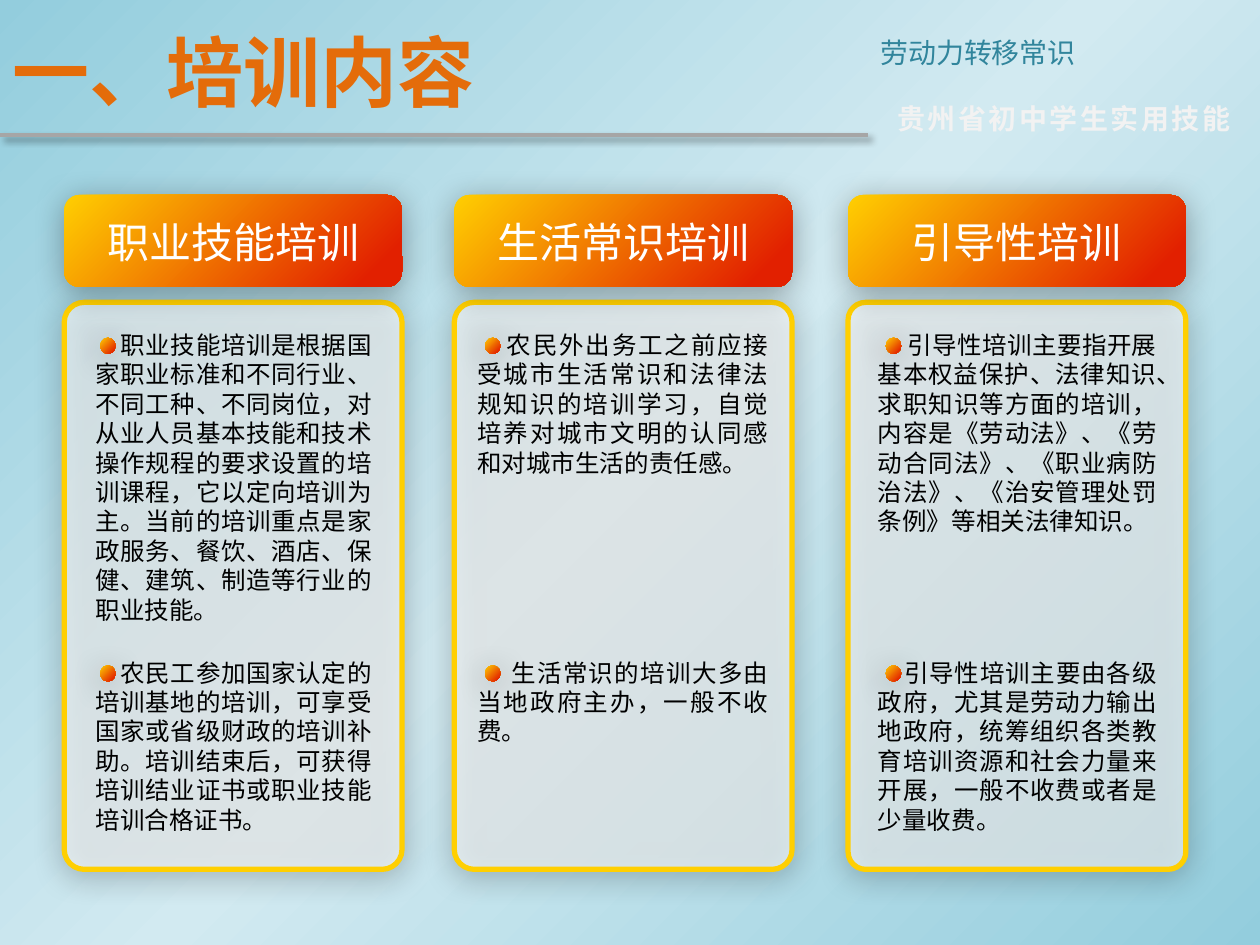
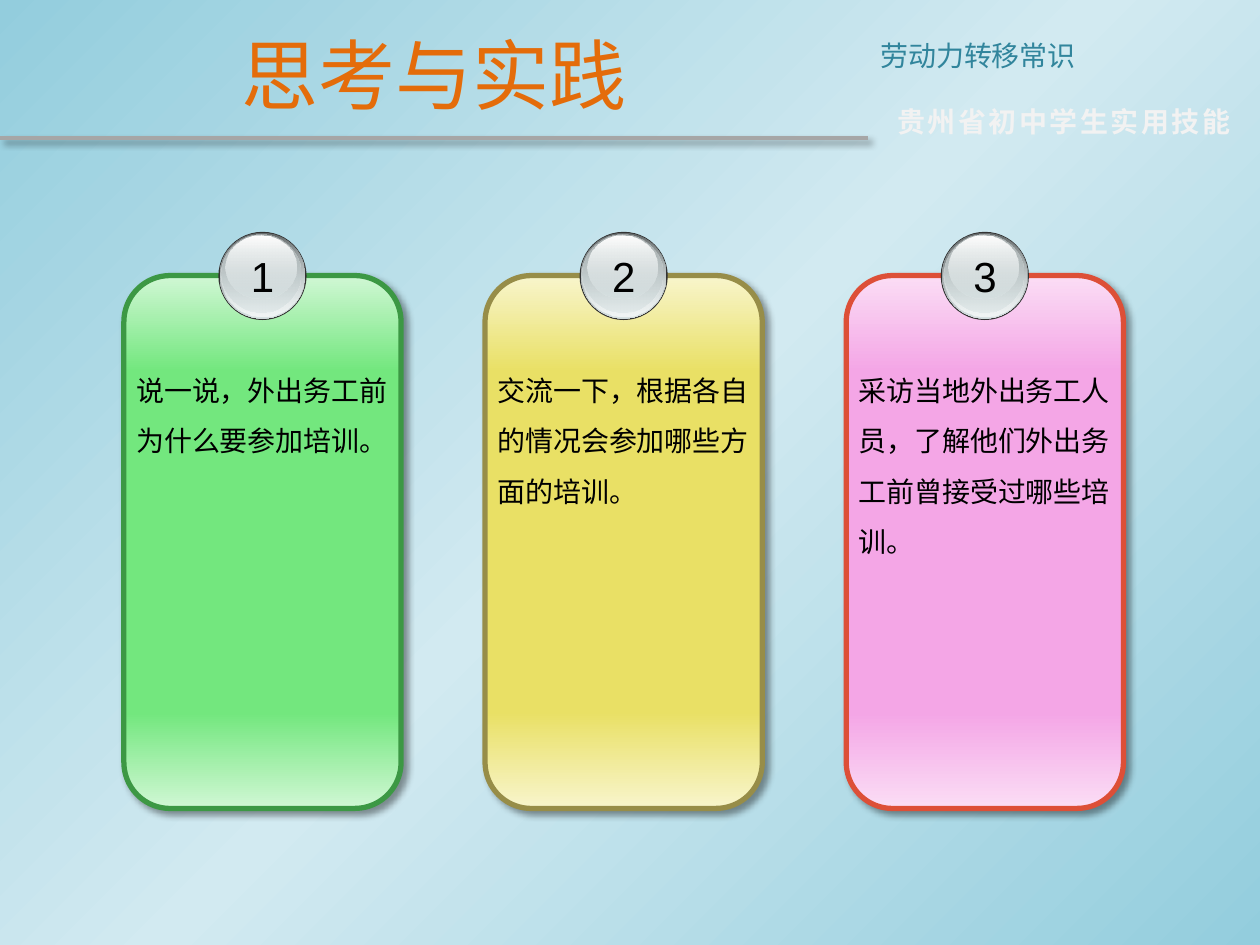
import lxml.etree
import pptx
import pptx.dml.color
import pptx.enum.shapes
import pptx.enum.text
import pptx.oxml.ns
import pptx.util

Pt = pptx.util.Pt
qn = pptx.oxml.ns.qn
KIND = pptx.enum.shapes.MSO_SHAPE
ALIGN = pptx.enum.text.PP_ALIGN
SANS = "Noto Sans CJK SC"

HUES = {
    "sky": "93CDDD", "pale": "D2EAF1", "rule": "A6A6A6",
    "teal": "31859C", "title": "E46C0A", "mist": "F2F2F2",
    "black": "000000", "white": "FFFFFF",
    "gold": "FFCF01", "red": "E22000",
    "rim": "333333", "steel": "636869", "ash": "AAB2B3",
    "ice": "D6E1E2", "frost": "F1F5F5",
    "lime": "73E77E", "mint": "D0F7D4", "green": "3C9844",
    "corn": "E9E065", "cream": "F8F5CC", "olive": "978D48",
    "pink": "F4A6E6", "blush": "FBDDF5", "brick": "DD4F37",
}
FLAME = ([(0, "gold"), (90, "red")], 45)
GLOW = (33, 17.8, 3, 87)
DROP = (40, 4, 3, 45)


class Deck:
    def __init__(self):
        self.show = pptx.Presentation()
        self.show.slide_width, self.show.slide_height = Pt(720), Pt(540)
        self.slide = None

    def hue(self, name):
        return pptx.dml.color.RGBColor.from_string(HUES[name])

    def tint(self, node, name, alpha=100):
        color = lxml.etree.SubElement(node, qn("a:srgbClr"), val=HUES[name])
        if alpha < 100:
            lxml.etree.SubElement(color, qn("a:alpha"), val=str(alpha * 1000))

    def blend(self, fill, root, stops, angle):
        fill.gradient()
        grad = next(root.iter(qn("a:gradFill")))
        for child in list(grad):
            grad.remove(child)
        group = lxml.etree.SubElement(grad, qn("a:gsLst"))
        for place, *color in stops:
            stop = lxml.etree.SubElement(group, qn("a:gs"), pos=str(place * 1000))
            self.tint(stop, *color)
        lxml.etree.SubElement(grad, qn("a:lin"), ang=str(angle * 60000), scaled="0")

    def shade(self, effect, alpha, blur, dist, angle):
        cast = lxml.etree.SubElement(
            effect, qn("a:outerShdw"), blurRad=str(Pt(blur)), dist=str(Pt(dist)),
            dir=str(angle * 60000), algn="ctr", rotWithShape="0")
        self.tint(cast, "black", alpha)

    def shape(self, kind, box, fill, alpha=100, line=None, shadow=None, bend=None):
        item = self.slide.shapes.add_shape(kind, *map(Pt, box))
        if bend is not None:
            item.adjustments[0] = bend
        props = item.element.spPr
        if isinstance(fill, str):
            item.fill.solid()
            item.fill.fore_color.rgb = self.hue(fill)
            if alpha < 100:
                color = next(props.iter(qn("a:srgbClr")))
                lxml.etree.SubElement(color, qn("a:alpha"), val=str(alpha * 1000))
        else:
            self.blend(item.fill, props, *fill)
        if line:
            item.line.color.rgb = self.hue(line)
            item.line.width = Pt(3)
        else:
            item.line.fill.background()
        item.shadow.inherit = False
        if shadow:
            self.shade(props.find(qn("a:effectLst")), *shadow)

    def text(self, box, words, size, color="black", align=ALIGN.LEFT, font=SANS,
             bold=False, indent=0, space=0, lead=None, wrap=True, middle=False):
        frame = self.slide.shapes.add_textbox(*map(Pt, box)).text_frame
        frame.word_wrap = wrap
        if middle:
            frame.vertical_anchor = pptx.enum.text.MSO_ANCHOR.MIDDLE
        para = frame.paragraphs[0]
        para.alignment = align
        if lead:
            para.line_spacing = lead
        if indent:
            para._p.get_or_add_pPr().set("indent", str(Pt(indent)))
        run = para.add_run()
        run.text = words
        run.font.size = Pt(size)
        run.font.bold = bold
        run.font.color.rgb = self.hue(color)
        run.font.name = font
        props = run._r.get_or_add_rPr()
        lxml.etree.SubElement(props, qn("a:ea"), typeface=font)
        if space:
            props.set("spc", str(int(space * 100)))

    def rule(self, top):
        link = self.slide.shapes.add_connector(
            pptx.enum.shapes.MSO_CONNECTOR.STRAIGHT, 0, Pt(top), Pt(496), Pt(top))
        link.line.color.rgb = self.hue("rule")
        link.line.width = Pt(2.25)
        effect = lxml.etree.SubElement(link.element.spPr, qn("a:effectLst"))
        self.shade(effect, *DROP)

    def page(self, title, align, bold, shift):
        self.slide = self.show.slides.add_slide(self.show.slide_layouts[6])
        self.blend(self.slide.background.fill, self.slide.element,
                   [(0, "sky"), (50, "pale"), (100, "sky")], 45)
        self.rule(77 + shift)
        self.text((496, 16.5 + shift, 224, 27), "劳动力转移常识", 16, "teal",
                  ALIGN.JUSTIFY)
        self.text((496, 54.5 + shift, 224, 27), "贵州省初中学生实用技能", 16,
                  "mist", ALIGN.CENTER, bold=True, space=1.5)
        self.text((0, 3.5 + shift, 496, 73.5), title, 44, "title", align,
                  bold=bold, middle=True)

    def panel(self, left, head, inset, width, dot, bend, notes):
        self.shape(KIND.ROUNDED_RECTANGLE, (left, 172.8, 193, 324), "white", 60,
                   "gold", GLOW, bend)
        self.shape(KIND.ROUNDED_RECTANGLE, (left, 111.4, 193, 52.6), FLAME,
                   shadow=GLOW)
        self.text((left, 120.2, 193, 36.7), head, 24, "white", ALIGN.CENTER)
        for top, (indent, words) in zip((185, 372.2), notes):
            self.text((left + inset, top, width, 110), words, 14,
                      align=ALIGN.JUSTIFY, indent=indent)
            self.shape(KIND.OVAL, (left + dot, top + 8, 8.8, 9.2), FLAME,
                       shadow=GLOW)

    def card(self, left, mark, words, edge, core, line):
        stops = [(0, edge), (18, core), (82, core), (100, edge)]
        self.shape(KIND.ROUNDED_RECTANGLE, (left, 157.5, 158.4, 304.5), (stops, 90),
                   line=line, shadow=DROP)
        self.text((left, 200.2, 158.4, 120), words, 16, lead=1.5)
        for (x, y, wide, high), fill in BALL:
            self.shape(KIND.OVAL, (left + x, y, wide, high), fill)
        self.text((left + 65.3, 139.7, 28, 36), mark, 24, align=ALIGN.CENTER,
                  font="Arial", wrap=False)


BALL = [
    ((54, 132.5, 50.4, 50.4), "rim"),
    ((54.7, 133, 49, 49), ([(0, "steel"), (100, "ice")], 90)),
    ((55.3, 133.3, 47.6, 47.6), ([(0, "ice", 0), (100, "frost")], 90)),
    ((55.9, 133.8, 45.2, 44.8), ([(0, "ash"), (100, "ice", 48)], 90)),
    ((58.3, 134.6, 40.3, 36), ([(0, "white"), (100, "ice", 38)], 90)),
]

PANELS = [
    (36.7, "职业技能培训", 10.8, 172, 20.6, 0.059, [
        (14.3, "职业技能培训是根据国家职业标准和不同行业、不同工种、不同岗位，对从业人员基本技能和技术操作规程的要求设置的培训课程，它以定向培训为主。当前的培训重点是家政服务、餐饮、酒店、保健、建筑、制造等行业的职业技能。"),
        (14.3, "农民工参加国家认定的培训基地的培训，可享受国家或省级财政的培训补助。培训结束后，可获得培训结业证书或职业技能培训合格证书。")]),
    (259.6, "生活常识培训", 6, 180.7, 17.6, 0.059, [
        (17, "农民外出务工之前应接受城市生活常识和法律法规知识的培训学习，自觉培养对城市文明的认同感和对城市生活的责任感。"),
        (19.5, "生活常识的培训大多由当地政府主办，一般不收费。")]),
    (484.6, "引导性培训", 10, 173.5, 21.6, 0.052, [
        (17, "引导性培训主要指开展基本权益保护、法律知识、求职知识等方面的培训，内容是《劳动法》、《劳动合同法》、《职业病防治法》、《治安管理处罚条例》等相关法律知识。"),
        (15, "引导性培训主要由各级政府，尤其是劳动力输出地政府，统筹组织各类教育培训资源和社会力量来开展，一般不收费或者是少量收费。")]),
]

CARDS = [
    ("说一说，外出务工前为什么要参加培训。", "mint", "lime", "green"),
    ("交流一下，根据各自的情况会参加哪些方面的培训。", "cream", "corn", "olive"),
    ("采访当地外出务工人员，了解他们外出务工前曾接受过哪些培训。",
     "blush", "pink", "brick"),
]


def main():
    deck = Deck()
    deck.page("一、培训内容", ALIGN.LEFT, True, 0)
    for panel in PANELS:
        deck.panel(*panel)
    deck.page("思考与实践", ALIGN.CENTER, False, 1.8)
    for spot, card in enumerate(CARDS):
        deck.card(70.8 + spot * 206.4, str(spot + 1), *card)
    deck.show.save("out.pptx")


if __name__ == "__main__":
    main()
